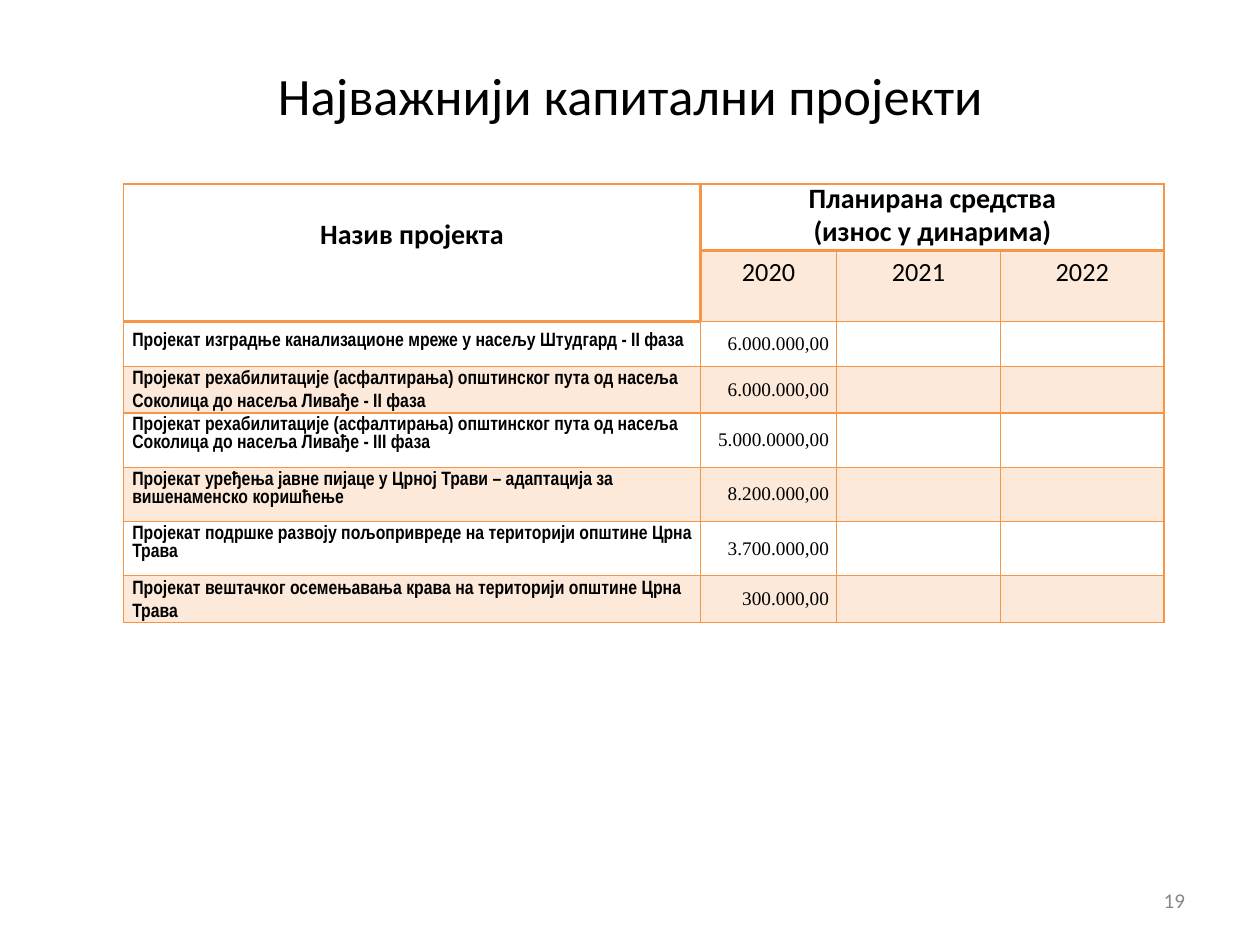
from lxml.etree import SubElement
from pptx import Presentation
from pptx.dml.color import RGBColor
from pptx.enum.text import MSO_ANCHOR as Anchor, PP_ALIGN as Align
from pptx.oxml import parse_xml
from pptx.oxml.ns import nsdecls, qn
from pptx.util import Inches, Pt

TITLE = "Најважнији капитални пројекти"
PAGE = "19"
NAME = "Назив пројекта"
FUNDS = ["Планирана средства", "(износ у динарима)"]
YEARS = ["2020", "2021", "2022"]
# Name lines, amount, line pitch in points, top margin in inches
ROWS = [
    (["Пројекат изградње канализационе мреже у насељу Штудгард - II фаза"],
     "6.000.000,00", 10.3, 0.09),
    (["Пројекат рехабилитације (асфалтирања) општинског пута од насеља",
      "Соколица до насеља Ливађе - II фаза"], "6.000.000,00", 12.7, 0),
    (["Пројекат рехабилитације (асфалтирања) општинског пута од насеља",
      "Соколица до насеља Ливађе - III фаза"], "5.000.0000,00", 10.3, 0.03),
    (["Пројекат уређења јавне пијаце у Црној Трави – адаптација за "
      "вишенаменско коришћење"], "8.200.000,00", 10.3, 0.03),
    (["Пројекат подршке развоју пољопривреде на територији општине Црна "
      "Трава"], "3.700.000,00", 10.3, 0.03),
    (["Пројекат вештачког осемењавања крава на територији општине Црна "
      "Трава"], "300.000,00", 13.2, 0),
]
COLS = [4.58, 1.08, 1.3, 1.3]
HEIGHTS = [0.53, 0.56, 0.36, 0.37, 0.43, 0.43, 0.43, 0.37]
ORANGE, BLACK, GRAY = "F79546", "000000", "888888"
THIN, THICK = 1, 2.25
NO_STYLE = "{2D5ABB26-0587-4C30-8999-92F81FD0307C}"


def rgb(code):
    return RGBColor.from_string(code)


def write(frame, lines, size, font="Calibri", bold=False, color=BLACK,
          align=Align.LEFT, pitch=None):
    frame.text = "\n".join(lines)
    for para in frame.paragraphs:
        para.alignment = align
        if pitch:
            para.line_spacing = Pt(pitch)
        for run in para.runs:
            face = run.font
            face.name, face.size, face.bold = font, Pt(size), bold
            face.color.rgb = rgb(color)


def label(slide, box, text, size, **style):
    frame = slide.shapes.add_textbox(*map(Inches, box)).text_frame
    frame.margin_left = frame.margin_right = 0
    frame.margin_top = frame.margin_bottom = 0
    frame.word_wrap = True
    write(frame, [text], size, **style)


def flat(line, col):
    """Weight of a horizontal rule above row number `line`."""
    if line == 1 and col == 0:
        return 0
    return THICK if line == 1 or (line == 2 and col == 0) else THIN


def tall(row, line):
    """Weight of a vertical rule left of column number `line`."""
    if row == 0 and line in (2, 3):
        return 0
    return THICK if row < 2 and line == 1 else THIN


def border(cell, row, col):
    weights = {
        "L": tall(row, col),
        "R": tall(row, col + cell.span_width),
        "T": flat(row, col),
        "B": flat(row + cell.span_height, col),
    }
    props = cell._tc.get_or_add_tcPr()
    edges = [(side, wide) for side, wide in weights.items() if wide]
    for spot, (side, wide) in enumerate(edges):
        props.insert(spot, parse_xml(
            f'<a:ln{side} {nsdecls("a")} w="{int(Pt(wide))}"><a:solidFill>'
            f'<a:srgbClr val="{ORANGE}"/></a:solidFill></a:ln{side}>'))


def shade(cell, tint):
    if not tint:
        cell.fill.background()
        return
    cell.fill.solid()
    cell.fill.fore_color.rgb = rgb(ORANGE)
    for color in cell._tc.tcPr.iter(qn("a:srgbClr")):
        SubElement(color, qn("a:alpha")).set("val", "20000")


def main():
    prs = Presentation()
    prs.slide_width, prs.slide_height = Inches(10), Inches(7.5)
    slide = prs.slides.add_slide(prs.slide_layouts[6])

    # Page number
    label(slide, (9.21, 7.07, 0.22, 0.19), PAGE, 12, color=GRAY,
          align=Align.CENTER, pitch=12.4)

    # Table grid
    box = map(Inches, (0.98, 1.46, sum(COLS), sum(HEIGHTS)))
    table = slide.shapes.add_table(len(HEIGHTS), len(COLS), *box).table
    table.first_row = table.horz_banding = False
    table._tbl.tblPr.find(qn("a:tableStyleId")).text = NO_STYLE
    for col, wide in zip(table.columns, COLS):
        col.width = Inches(wide)
    for row, high in zip(table.rows, HEIGHTS):
        row.height = Inches(high)
    table.cell(0, 0).merge(table.cell(1, 0))
    table.cell(0, 1).merge(table.cell(0, 3))

    # Fills and rules
    for r in range(len(HEIGHTS)):
        for c in range(len(COLS)):
            cell = table.cell(r, c)
            cell.margin_left = cell.margin_right = 0
            cell.margin_top = cell.margin_bottom = 0
            shade(cell, r % 2 == 1 and (r, c) != (1, 0))
            border(cell, r, c)

    # Header
    head = table.cell(0, 0)
    head.margin_top = Inches(0.27)
    write(head.text_frame, [NAME], 16, bold=True, align=Align.CENTER)
    write(table.cell(0, 1).text_frame, FUNDS, 16, bold=True,
          align=Align.CENTER, pitch=18.6)
    for c, year in enumerate(YEARS, 1):
        cell = table.cell(1, c)
        cell.margin_top = Inches(0.05)
        write(cell.text_frame, [year], 15, align=Align.CENTER, pitch=17.8)

    # Projects
    for r, (lines, amount, pitch, top) in enumerate(ROWS, 2):
        name, cost = table.cell(r, 0), table.cell(r, 1)
        name.margin_left, name.margin_top = Inches(0.07), Inches(top)
        write(name.text_frame, lines, 11, "Arial Narrow", True, pitch=pitch)
        cost.margin_right = Inches(0.06)
        cost.vertical_anchor = Anchor.MIDDLE
        write(cost.text_frame, [amount], 11, "Times New Roman",
              align=Align.RIGHT)

    # Title
    label(slide, (2.19, 0.5, 5.63, 0.53), TITLE, 30, align=Align.CENTER)

    prs.save("out.pptx")


if __name__ == "__main__":
    main()
